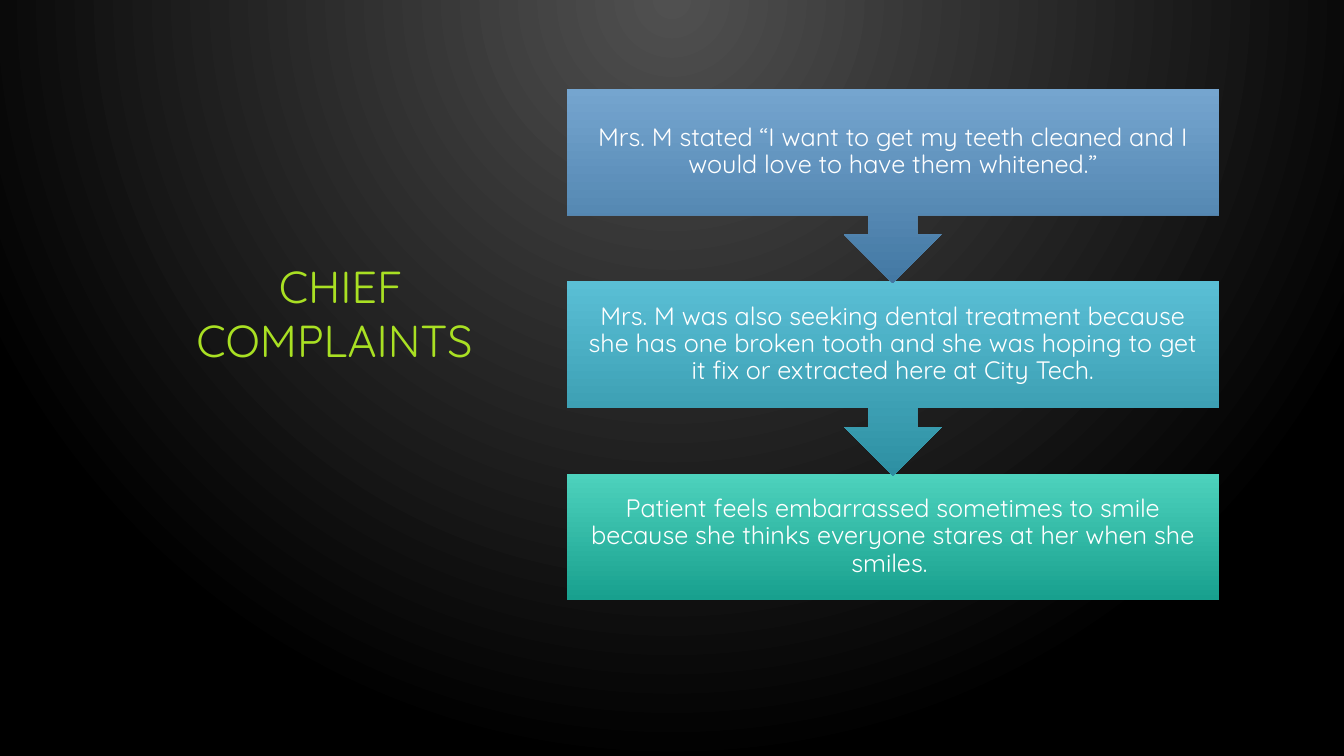
"""Build the chief complaints slide: a title beside a descending flow of three steps."""
from dataclasses import dataclass

from lxml.etree import SubElement
from pptx import Presentation
from pptx.dml.color import RGBColor
from pptx.dml.fill import FillFormat
from pptx.enum.shapes import MSO_SHAPE as Shape
from pptx.enum.text import MSO_ANCHOR as Anchor, MSO_AUTO_SIZE as Fit, PP_ALIGN as Align
from pptx.oxml.ns import qn
from pptx.slide import Slide
from pptx.text.text import TextFrame
from pptx.util import Inches, Pt

FONT = "Quicksand"
GRAY = RGBColor(0x50, 0x50, 0x50)
BLACK = RGBColor(0x00, 0x00, 0x00)
WHITE = RGBColor(0xFF, 0xFF, 0xFF)
LIME = RGBColor(0xA9, 0xE0, 0x23)
SKY = RGBColor(0x75, 0xA5, 0xCF)
BLUE = RGBColor(0x43, 0x78, 0xA3)
AQUA = RGBColor(0x5A, 0xBF, 0xD5)
TEAL = RGBColor(0x2D, 0x8F, 0xA2)
MINT = RGBColor(0x4D, 0xD2, 0xBD)
GREEN = RGBColor(0x18, 0xA0, 0x8E)

LEFT, TOP, WIDTH, PITCH = 5.62, 0.88, 6.47, 1.91


@dataclass
class Step:
    text: str
    light: RGBColor
    dark: RGBColor
    kind: Shape = Shape.DOWN_ARROW_CALLOUT
    height: float = 1.93


STEPS = [
    Step("Mrs. M stated “I want to get my teeth cleaned and I would love to "
         "have them whitened.”", SKY, BLUE),
    Step("Mrs. M was also seeking dental treatment because she has one broken tooth "
         "and she was hoping to get it fix or extracted here at City Tech.", AQUA, TEAL),
    Step("Patient feels embarrassed sometimes to smile because she thinks everyone "
         "stares at her when she smiles. ", MINT, GREEN, Shape.RECTANGLE, 1.25),
]


def shade(fill: FillFormat, start: RGBColor, end: RGBColor) -> None:
    fill.gradient()
    fill.gradient_angle = 270
    for stop, color in zip(fill.gradient_stops, (start, end)):
        stop.color.rgb = color


def write(frame: TextFrame, text: str, size: int, color: RGBColor, space: float) -> None:
    frame.text = text
    frame.word_wrap = True
    frame.auto_size = Fit.NONE
    para = frame.paragraphs[0]
    para.alignment = Align.CENTER
    para.line_spacing = space
    font = para.runs[0].font
    font.name, font.size, font.color.rgb = FONT, Pt(size), color


def paint(slide: Slide) -> None:
    shade(slide.background.fill, GRAY, BLACK)
    line = slide.element.find(".//" + qn("a:lin"))
    grad = line.getparent()
    grad.remove(line)
    glow = SubElement(grad, qn("a:path"), {"path": "circle"})
    SubElement(glow, qn("a:fillToRect"), {"l": "43000", "t": "0", "r": "43000", "b": "100000"})


def head(slide: Slide) -> None:
    title = slide.shapes.title
    title.left, title.top = Inches(1.59), Inches(2.52)
    title.width, title.height = Inches(3.58), Inches(2.92)
    write(title.text_frame, "CHIEF COMPLAINTS ", 32, LIME, 1.0)
    title.text_frame.vertical_anchor = Anchor.TOP


def draw(slide: Slide, step: Step, top: float) -> None:
    box = slide.shapes.add_shape(
        step.kind, Inches(LEFT), Inches(top), Inches(WIDTH), Inches(step.height))
    box.shadow.inherit = False
    box.line.fill.background()
    shade(box.fill, step.light, step.dark)
    frame = box.text_frame
    write(frame, step.text, 18, WHITE, 0.9)
    frame.vertical_anchor = Anchor.MIDDLE
    frame.margin_left = frame.margin_right = Inches(0.14)
    frame.margin_top = frame.margin_bottom = Inches(0.14)


def main() -> None:
    deck = Presentation()
    deck.slide_width, deck.slide_height = Inches(13.33), Inches(7.5)
    slide = deck.slides.add_slide(deck.slide_layouts[5])
    paint(slide)
    head(slide)
    for row, step in reversed(list(enumerate(STEPS))):
        draw(slide, step, TOP + row * PITCH)
    deck.save("out.pptx")


if __name__ == "__main__":
    main()
